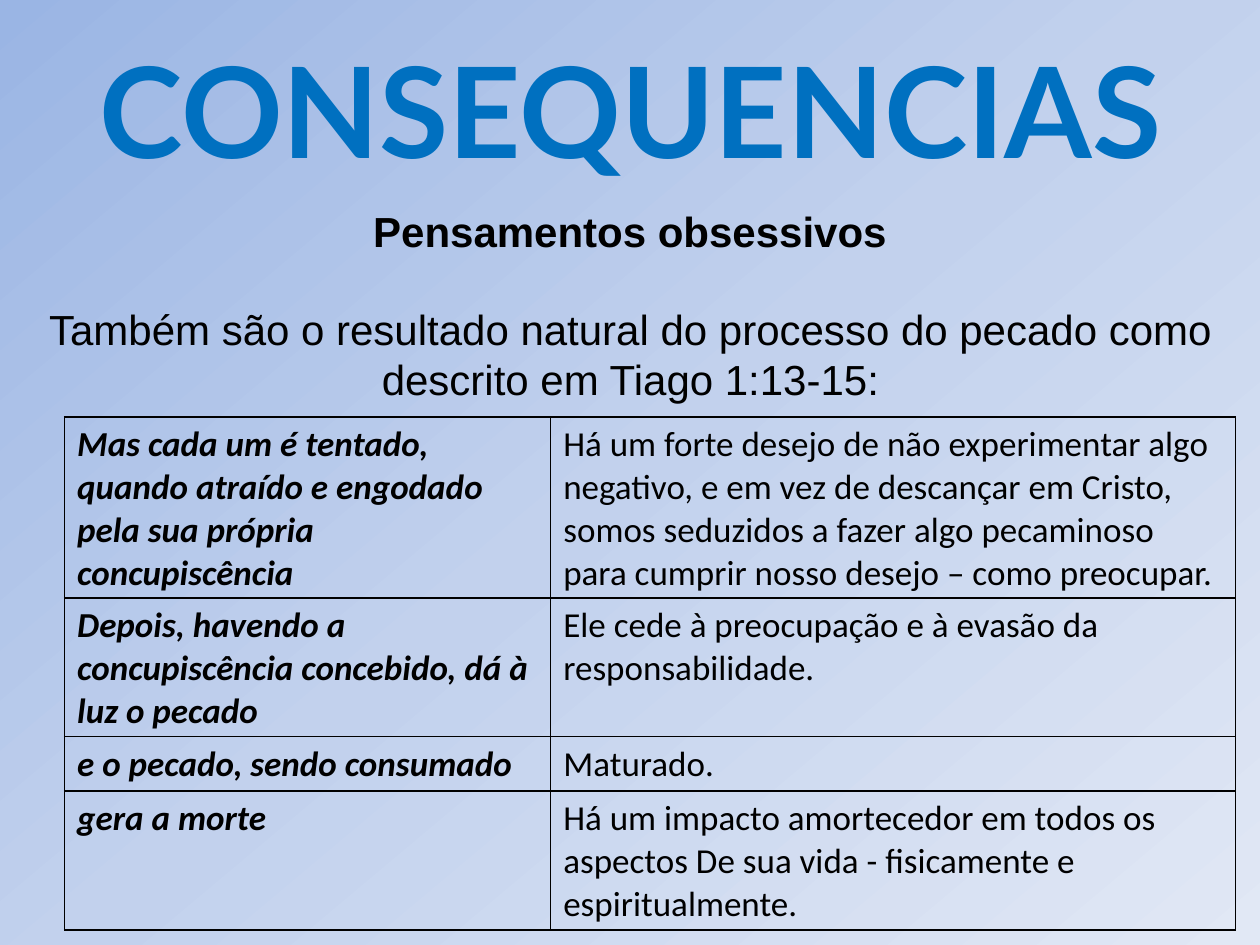
import copy

import pptx
import pptx.dml.color
import pptx.enum.text
import pptx.oxml
import pptx.oxml.ns
import pptx.util

Pt = pptx.util.Pt

COLORS = {
    "title": "0070C0",
    "text": "000000",
    "border": "000000",
}
BACKGROUND = [(0, "9AB5E4"), (0.5, "C2D1ED"), (1, "E1E8F5")]
BACKGROUND_ANGLE = 50  # clockwise

# text, (left, top, width, height), top inset, font, size, bold, color
TEXTS = [
    ("CONSEQUENCIAS", (14.4, 15.1, 692, 108), 3.6, "Lato", 72, True, "title"),
    ("Pensamentos obsessivos", (36, 111.6, 648, 47.5), 5.6, "Arial", 24, True, "text"),
    ("Também são o resultado natural do processo do pecado como descrito em Tiago 1:13-15:",
     (20, 167.8, 680.4, 62.6), 5.6, "Arial", 24, False, "text"),
]

ROWS = [
    ("Mas cada um é tentado, quando atraído e engodado pela sua própria concupiscência",
     "Há um forte desejo de não experimentar algo negativo, e em vez de descançar em Cristo, "
     "somos seduzidos a fazer algo pecaminoso para cumprir nosso desejo – como preocupar."),
    ("Depois, havendo a concupiscência concebido, dá à luz o pecado",
     "Ele cede à preocupação e à evasão da responsabilidade."),
    ("e o pecado, sendo consumado", "Maturado."),
    ("gera a morte",
     "Há um impacto amortecedor em todos os aspectos De sua vida - fisicamente e espiritualmente."),
]
TABLE_LEFT, TABLE_TOP = 36.9, 238.2
COLUMN_WIDTHS = [277.8, 391.2]
ROW_HEIGHTS = [103.4, 79.2, 31, 79.2]


def rgb(value):
    return pptx.dml.color.RGBColor.from_string(value)


def style_font(font, name, size, color, bold=False, italic=False):
    font.name = name
    font.size = Pt(size)
    font.bold = bold
    font.italic = italic
    font.color.rgb = rgb(color)


def set_background(s):
    fill = s.background.fill
    fill.gradient()
    fill.gradient_angle = 360 - BACKGROUND_ANGLE
    # The default gradient has two stops; repeat the last one for the third.
    last = s.background._cSld.findall(".//" + pptx.oxml.ns.qn("a:gs"))[-1]
    last.addnext(copy.deepcopy(last))
    for stop, (position, color) in zip(fill.gradient_stops, BACKGROUND):
        stop.position = position
        stop.color.rgb = rgb(color)


def add_text(s, text, box, inset, name, size, bold, color):
    sp = s.shapes.add_textbox(*map(Pt, box))
    tf = sp.text_frame
    tf.word_wrap = True
    tf.margin_top = Pt(inset)
    tf.text = text
    p = tf.paragraphs[0]
    p.alignment = pptx.enum.text.PP_ALIGN.CENTER
    style_font(p.runs[0].font, name, size, COLORS[color], bold)


def add_borders(cell):
    tcPr = cell._tc.get_or_add_tcPr()
    for side in ("lnL", "lnR", "lnT", "lnB"):
        tcPr.append(pptx.oxml.parse_xml(
            f'<a:{side} {pptx.oxml.ns.nsdecls("a")} w="{Pt(1)}"><a:solidFill>'
            f'<a:srgbClr val="{COLORS["border"]}"/></a:solidFill></a:{side}>'))


def add_verse_table(s):
    frame = s.shapes.add_table(
        len(ROWS), len(COLUMN_WIDTHS), Pt(TABLE_LEFT), Pt(TABLE_TOP),
        Pt(sum(COLUMN_WIDTHS)), Pt(sum(ROW_HEIGHTS)))
    table = frame.table
    table.first_row = False
    table.horz_banding = False
    for column, width in zip(table.columns, COLUMN_WIDTHS):
        column.width = Pt(width)
    for row, height, texts in zip(table.rows, ROW_HEIGHTS, ROWS):
        row.height = Pt(height)
        for i, (cell, text) in enumerate(zip(row.cells, texts)):
            cell.text_frame.text = text
            is_verse = i == 0
            style_font(cell.text_frame.paragraphs[0].runs[0].font,
                       "Calibri", 20, COLORS["text"], is_verse, is_verse)
            add_borders(cell)
            cell.fill.background()


def main():
    prs = pptx.Presentation()
    prs.slide_width, prs.slide_height = Pt(720), Pt(540)
    s = prs.slides.add_slide(prs.slide_layouts[6])
    set_background(s)
    for item in TEXTS:
        add_text(s, *item)
    add_verse_table(s)
    prs.save("out.pptx")


if __name__ == "__main__":
    main()
